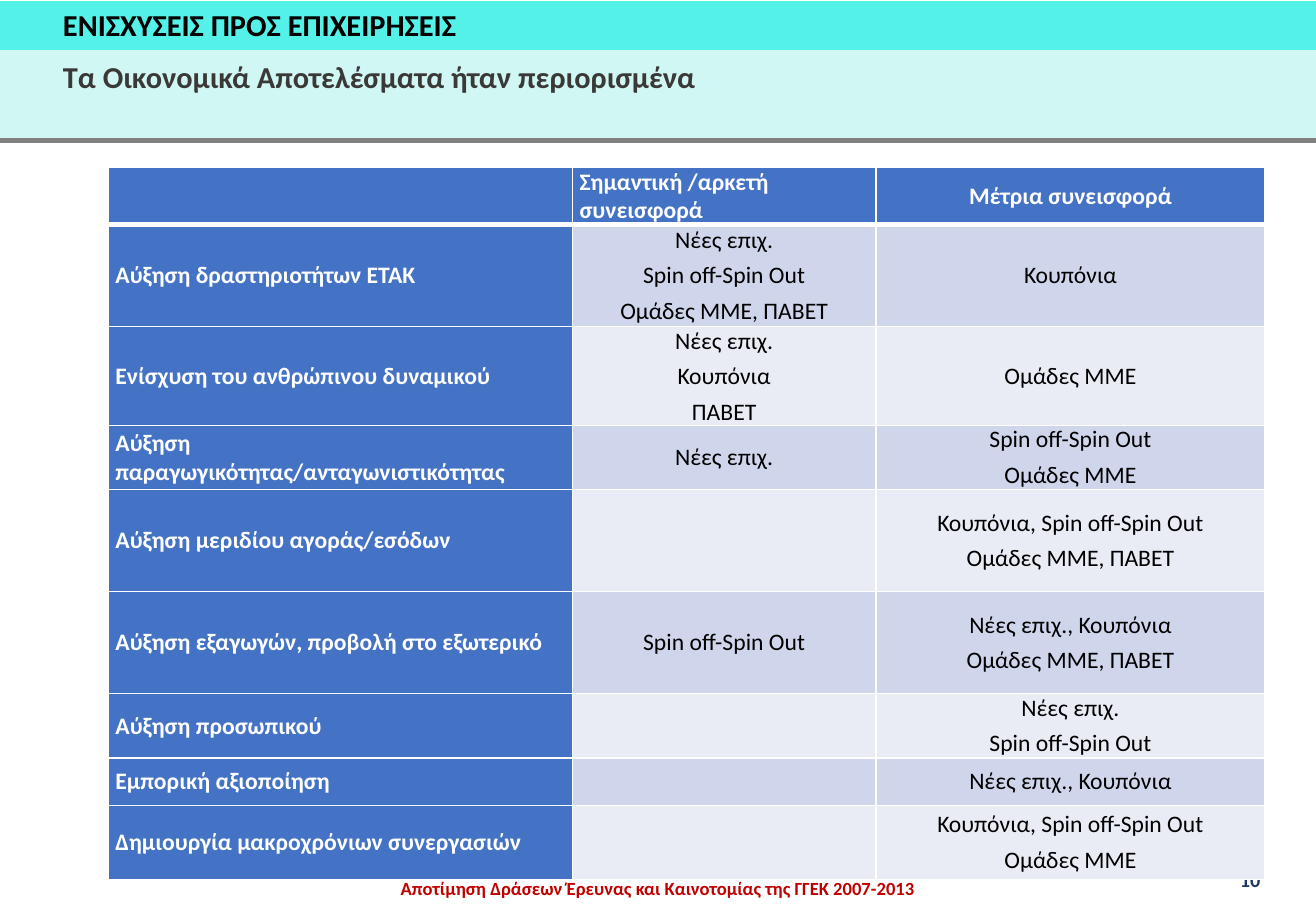
import pptx
import pptx.dml.color
import pptx.enum.shapes
import pptx.enum.text
import pptx.oxml
import pptx.oxml.ns
import pptx.util

WIDTH, HEIGHT = 10.83, 7.5
FONT = "Calibri"
LEFT = pptx.enum.text.PP_ALIGN.LEFT
CENTER = pptx.enum.text.PP_ALIGN.CENTER
MIDDLE = pptx.enum.text.MSO_ANCHOR.MIDDLE

COLUMN_WIDTHS = [3.82, 2.5, 3.2]
ROW_HEIGHTS = [0.47, 0.84, 0.81, 0.53, 0.84, 0.84, 0.53, 0.39, 0.61]
CONTRIBUTIONS = [
    ("", "Σημαντική /αρκετή συνεισφορά", "Μέτρια συνεισφορά"),
    ("Αύξηση δραστηριοτήτων ΕΤΑΚ", "Νέες επιχ.\nSpin off-Spin Out\nΟμάδες ΜΜΕ, ΠΑΒΕΤ", "Κουπόνια"),
    ("Ενίσχυση του ανθρώπινου δυναμικού", "Νέες επιχ.\nΚουπόνια\nΠΑΒΕΤ", "Ομάδες ΜΜΕ"),
    ("Αύξηση παραγωγικότητας/ανταγωνιστικότητας", "Νέες επιχ.", "Spin off-Spin Out\nΟμάδες ΜΜΕ"),
    ("Αύξηση μεριδίου αγοράς/εσόδων", "", "Κουπόνια, Spin off-Spin Out\nΟμάδες ΜΜΕ, ΠΑΒΕΤ"),
    ("Αύξηση εξαγωγών, προβολή στο εξωτερικό", "Spin off-Spin Out", "Νέες επιχ., Κουπόνια\nΟμάδες ΜΜΕ, ΠΑΒΕΤ"),
    ("Αύξηση προσωπικού", "", "Νέες επιχ.\nSpin off-Spin Out"),
    ("Εμπορική αξιοποίηση", "", "Νέες επιχ., Κουπόνια"),
    ("Δημιουργία μακροχρόνιων συνεργασιών", "", "Κουπόνια, Spin off-Spin Out\nΟμάδες ΜΜΕ"),
]


def color(value):
    """Turn a hex string into a colour."""
    return pptx.dml.color.RGBColor.from_string(value)


def inches(*lengths):
    """Turn lengths in inches into slide units."""
    return [pptx.util.Inches(length) for length in lengths]


def style(paragraph, size, hex_color, bold=True, align=LEFT):
    """Set the font and alignment of a paragraph."""
    paragraph.alignment = align
    paragraph.font.name = FONT
    paragraph.font.size = pptx.util.Pt(size)
    paragraph.font.bold = bold
    paragraph.font.color.rgb = color(hex_color)


def add_label(slide, box, text, size, hex_color, align=LEFT, wrap=True):
    """Add a one-line text box and return its frame."""
    frame = slide.shapes.add_textbox(*inches(*box)).text_frame
    frame.word_wrap = wrap
    frame.text = text
    style(frame.paragraphs[0], size, hex_color, align=align)
    return frame


def add_footer(slide, box):
    """Place the study title and the page number in the bottom strip."""
    left, top, width, height = box
    study = add_label(slide, (left + width * 0.26, top, width * 0.48, height),
                      "Aποτίμηση Δράσεων Έρευνας και Καινοτομίας της ΓΓΕΚ 2007-2013",
                      11, "C00000", CENTER)
    study.margin_left = study.margin_right = study.margin_top = study.margin_bottom = 0
    study.paragraphs[0].line_spacing = pptx.util.Pt(25.3)
    add_label(slide, (left + width * 0.933, top + 0.04, width * 0.05, 0.3), "10", 12, "203864")


def add_header_bands(slide, box):
    """Draw the two header bands and the rule beneath them."""
    left, top, width, height = box
    split = height * 0.35
    for offset, band_height, fill in ((0, split, "53F1E8"), (split, height - split, "D0F7F3")):
        band = slide.shapes.add_shape(pptx.enum.shapes.MSO_SHAPE.RECTANGLE,
                                      *inches(left, top + offset, width, band_height))
        band.shadow.inherit = False
        band.fill.solid()
        band.fill.fore_color.rgb = color(fill)
        band.line.fill.background()
    bottom = top + height
    rule = slide.shapes.add_connector(pptx.enum.shapes.MSO_CONNECTOR.STRAIGHT,
                                      *inches(left, bottom, left + width, bottom))
    rule.line.color.rgb = color("808080")
    rule.line.width = pptx.util.Pt(3)
    pptx.oxml.ns.qn("a:effectLst")
    rule._element.spPr.append(pptx.oxml.parse_xml(
        f'<a:effectLst {pptx.oxml.ns.nsdecls("a")}/>'))


def add_titles(slide, box):
    """Write the section title and the slide title over the bands."""
    left, top, width, height = box
    add_label(slide, (left, top, width * 0.59, height / 2), "ΕΝΙΣΧΥΣΕΙΣ ΠΡΟΣ ΕΠΙΧΕΙΡΗΣΕΙΣ",
              18, "000000", wrap=False)
    add_label(slide, (left, top + height / 2, width, height / 2),
              "Τα Οικονομικά Αποτελέσματα ήταν περιορισμένα", 18, "3B3838")


def set_borders(cell, bottom, top):
    """Draw white borders around a cell, before its fill is set."""
    properties = cell._tc.get_or_add_tcPr()
    for side, points in (("L", 1), ("R", 1), ("T", top), ("B", bottom)):
        properties.append(pptx.oxml.parse_xml(
            f'<a:ln{side} {pptx.oxml.ns.nsdecls("a")} w="{pptx.util.Pt(points)}">'
            f'<a:solidFill><a:srgbClr val="FFFFFF"/></a:solidFill></a:ln{side}>'))


def fill_cell(cell, text, row, column):
    """Write and style one cell by its place in the table."""
    heading = row == 0 or column == 0
    set_borders(cell, bottom=3 if row == 0 else 1, top=3 if row == 1 else 1)
    cell.fill.solid()
    cell.fill.fore_color.rgb = color("4472C4" if heading else "CFD5EA" if row % 2 else "E9EBF5")
    cell.vertical_anchor = MIDDLE
    cell.margin_left = cell.margin_right = pptx.util.Inches(0.06)
    cell.margin_top = cell.margin_bottom = 0
    cell.text = text
    align = LEFT if column == 0 or (row, column) == (0, 1) else CENTER
    for index, paragraph in enumerate(cell.text_frame.paragraphs):
        if index:
            paragraph.space_before = pptx.util.Pt(2)
        paragraph.space_after = pptx.util.Pt(2)
        style(paragraph, 14, "FFFFFF" if heading else "000000", heading, align)


def add_contributions(slide, box):
    """Build the table of contributions by kind of result."""
    table = slide.shapes.add_table(len(ROW_HEIGHTS), len(COLUMN_WIDTHS), *inches(*box)).table
    table.first_row = table.horz_banding = False
    for column, width in zip(table.columns, COLUMN_WIDTHS):
        column.width = pptx.util.Inches(width)
    for row, height in zip(table.rows, ROW_HEIGHTS):
        row.height = pptx.util.Inches(height)
    for row, texts in enumerate(CONTRIBUTIONS):
        for column, text in enumerate(texts):
            fill_cell(table.cell(row, column), text, row, column)


def main():
    """Build the slide and save it."""
    deck = pptx.Presentation()
    deck.slide_width, deck.slide_height = inches(WIDTH, HEIGHT)
    slide = deck.slides.add_slide(deck.slide_layouts[6])
    add_footer(slide, (0, HEIGHT * 0.94, WIDTH, HEIGHT * 0.05))
    add_header_bands(slide, (0, 0.01, WIDTH, 1.15))
    add_contributions(slide, (0.89, 1.38, sum(COLUMN_WIDTHS), sum(ROW_HEIGHTS)))
    add_titles(slide, (0.42, 0, 5.9, 0.86))
    deck.save("out.pptx")


if __name__ == "__main__":
    main()
